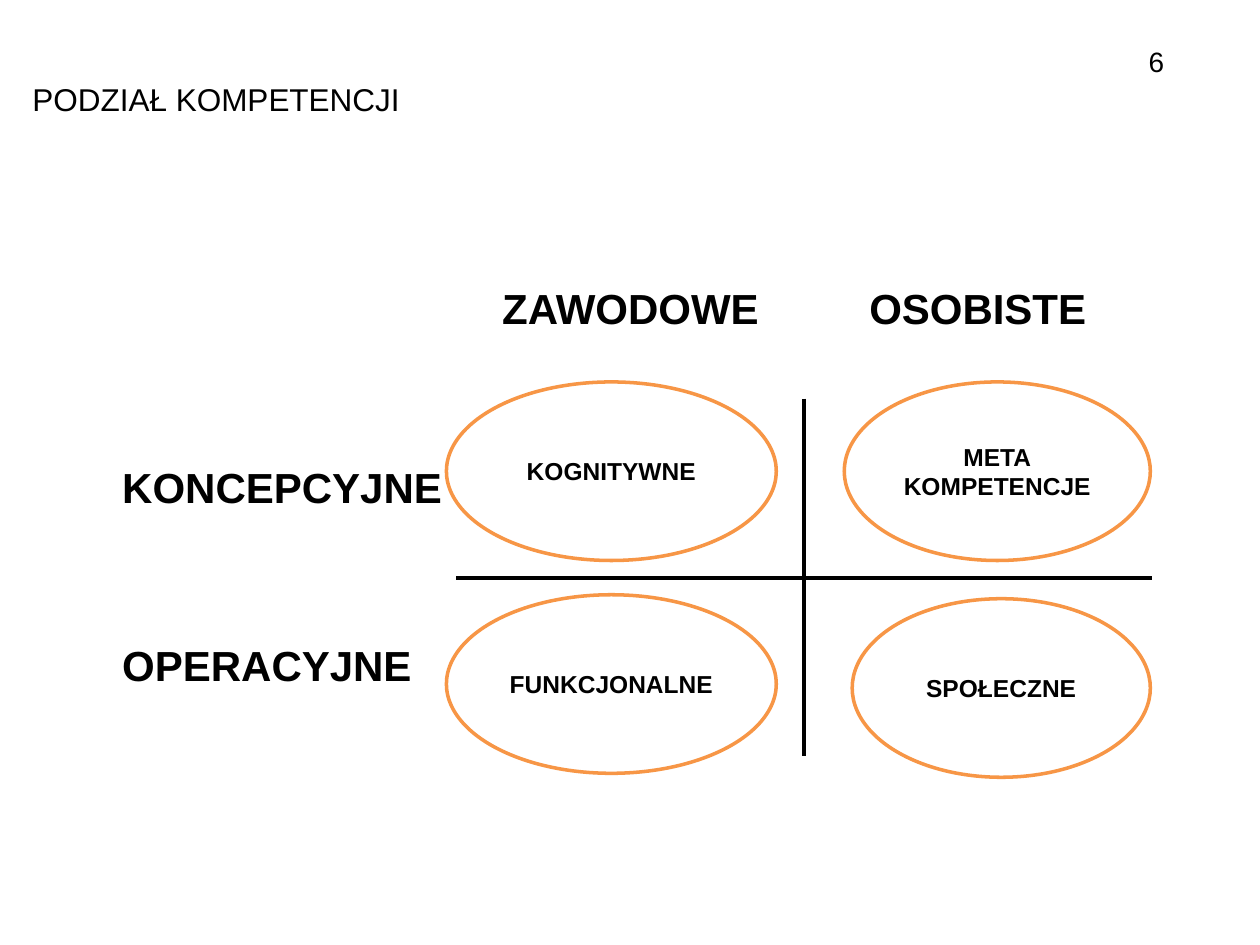
"""Build the slide on the division of competences."""
from lxml import etree
from pptx import Presentation
from pptx import util as u
from pptx.dml.color import RGBColor
from pptx.enum import shapes, text
from pptx.oxml.ns import qn

BLACK = RGBColor(0x00, 0x00, 0x00)
WHITE = RGBColor(0xFF, 0xFF, 0xFF)
ORANGE = RGBColor(0xF7, 0x96, 0x46)


def write(paragraph, words, size, align, bold=False):
    paragraph.text = words
    paragraph.alignment = align
    paragraph.font.name = "Arial"
    paragraph.font.size = u.Pt(size)
    paragraph.font.bold = bold
    paragraph.font.color.rgb = BLACK


def add_border(cell, side):
    border = etree.SubElement(cell._tc.get_or_add_tcPr(), qn(f"a:ln{side}"), w=str(u.Pt(3)))
    fill = etree.SubElement(border, qn("a:solidFill"))
    etree.SubElement(fill, qn("a:srgbClr"), val=str(BLACK))


deck = Presentation()
deck.slide_width, deck.slide_height = u.Cm(25.4), u.Cm(19.05)
slide = deck.slides.add_slide(deck.slide_layouts[5])

heading = slide.shapes.title
heading.left, heading.top, heading.width, heading.height = u.Cm(0.4), u.Cm(1.48), u.Cm(20.62), u.Cm(1.85)
heading.text_frame.vertical_anchor = text.MSO_ANCHOR.TOP
write(heading.text_frame.paragraphs[0], "PODZIAŁ KOMPETENCJI", 18, text.PP_ALIGN.LEFT)

matrix = slide.shapes.add_table(3, 3, u.Cm(2.21), u.Cm(4.45), u.Cm(21), u.Cm(10.8)).table
matrix.first_row = matrix.horz_banding = False
labels = [
    ["", "ZAWODOWE", "OSOBISTE"],
    ["KONCEPCYJNE", "", ""],
    ["OPERACYJNE", "", ""],
]
inner_borders = {(1, 1): "RB", (1, 2): "LB", (2, 1): "RT", (2, 2): "LT"}
for row, row_labels in enumerate(labels):
    for column, label in enumerate(row_labels):
        cell = matrix.cell(row, column)
        for side in inner_borders.get((row, column), ""):
            add_border(cell, side)
        cell.fill.background()
        cell.vertical_anchor = text.MSO_ANCHOR.MIDDLE
        if label:
            align = text.PP_ALIGN.LEFT if column == 0 else text.PP_ALIGN.CENTER
            write(cell.text_frame.paragraphs[0], label, 24, align, bold=True)

page_number = slide.shapes.add_textbox(u.Cm(17.78), u.Cm(0.58), u.Cm(5.94), u.Cm(1.32)).text_frame
page_number.word_wrap = True
page_number.vertical_anchor = text.MSO_ANCHOR.MIDDLE
write(page_number.paragraphs[0], "6", 16, text.PP_ALIGN.RIGHT)

competences = [
    ("KOGNITYWNE", 9, 7.7, 6.65),
    ("META\nKOMPETENCJE", 17.02, 7.7, 6.17),
    ("FUNKCJONALNE", 9, 11.99, 6.65),
    ("SPOŁECZNE", 17.18, 12.07, 6.01),
]
for name, left, top, width in competences:
    competence = slide.shapes.add_shape(
        shapes.MSO_SHAPE.OVAL, u.Cm(left), u.Cm(top), u.Cm(width), u.Cm(3.6))
    competence.shadow.inherit = False
    competence.fill.solid()
    competence.fill.fore_color.rgb = WHITE
    competence.line.color.rgb = ORANGE
    competence.line.width = u.Pt(2)
    competence.text_frame.vertical_anchor = text.MSO_ANCHOR.MIDDLE
    write(competence.text_frame.paragraphs[0], name, 14, text.PP_ALIGN.CENTER, bold=True)

deck.save("out.pptx")
